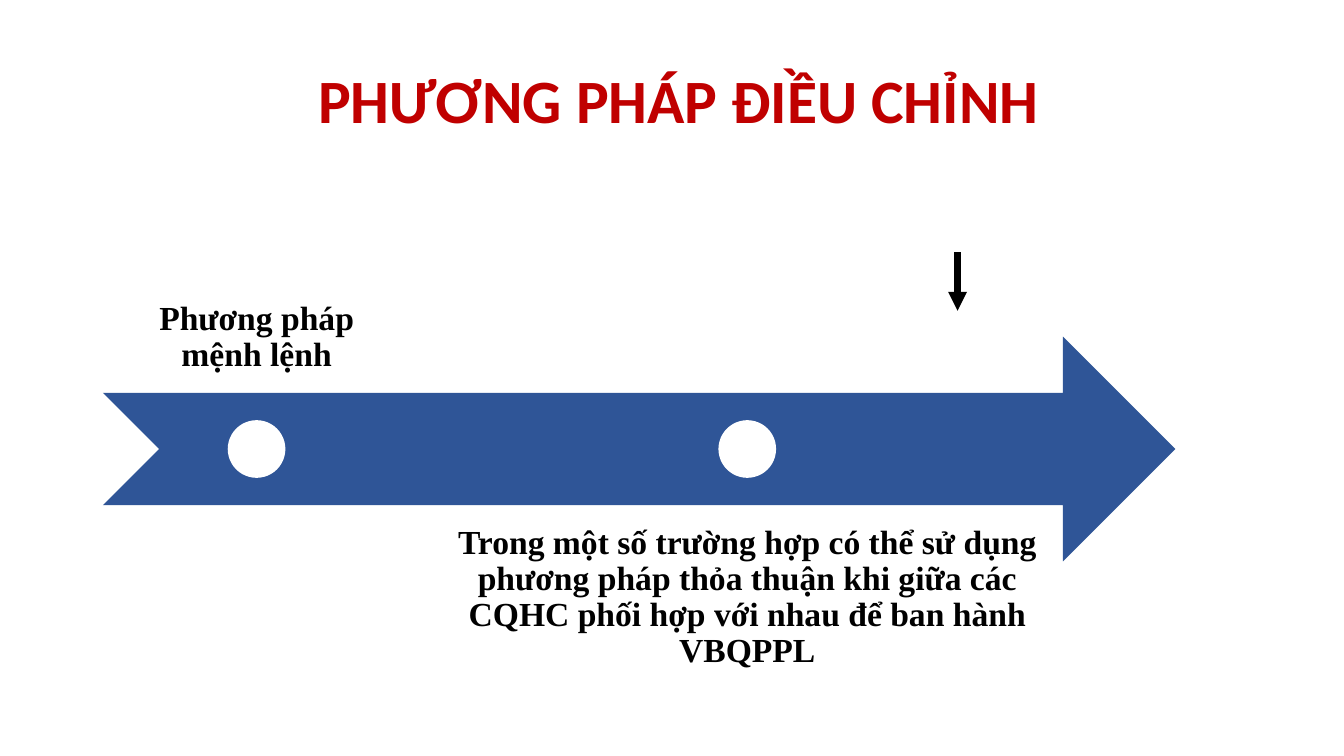
from pptx import Presentation
from pptx.dml.color import RGBColor
from pptx.enum.shapes import MSO_CONNECTOR, MSO_SHAPE
from pptx.enum.text import MSO_ANCHOR, PP_ALIGN
from pptx.oxml.ns import qn
from pptx.util import Pt
from lxml import etree

NOTCHED_ARROW = MSO_SHAPE.NOTCHED_RIGHT_ARROW
OVAL = MSO_SHAPE.OVAL
STRAIGHT = MSO_CONNECTOR.STRAIGHT
TOP, MIDDLE, BOTTOM = MSO_ANCHOR.TOP, MSO_ANCHOR.MIDDLE, MSO_ANCHOR.BOTTOM
CENTER = PP_ALIGN.CENTER

COLORS = {"title": "C00000", "arrow": "2F5597", "dot": "FFFFFF", "text": "000000"}

ARROW_LEFT, ARROW_TOP = 73.5, 240.5
ARROW_WIDTH, ARROW_HEIGHT = 766, 160.5
DOT_SIZE = 40.2
LABEL_INSET = 13.7


def color(name):
    return RGBColor.from_string(COLORS[name])


def add_shape(slide, kind, left, top, width, height, color_name):
    shape = slide.shapes.add_shape(kind, Pt(left), Pt(top), Pt(width), Pt(height))
    shape.shadow.inherit = False
    shape.fill.solid()
    shape.fill.fore_color.rgb = color(color_name)
    shape.line.fill.background()
    return shape


def add_text(slide, text, left, top, width, height, size, font_name, color_name, anchor, inset):
    box = slide.shapes.add_textbox(Pt(left), Pt(top), Pt(width), Pt(height))
    frame = box.text_frame
    frame.word_wrap = True
    frame.vertical_anchor = anchor
    frame.margin_left = frame.margin_right = Pt(inset)
    frame.margin_top = frame.margin_bottom = Pt(inset)
    paragraph = frame.paragraphs[0]
    paragraph.text = text
    paragraph.alignment = CENTER
    paragraph.line_spacing = 0.9
    font = paragraph.font
    font.name = font_name
    font.size = Pt(size)
    font.bold = True
    font.color.rgb = color(color_name)


def add_milestone(slide, text, left, top, width, anchor):
    dot_left = left + (width - DOT_SIZE) / 2
    dot_top = ARROW_TOP + (ARROW_HEIGHT - DOT_SIZE) / 2
    dot = add_shape(slide, OVAL, dot_left, dot_top, DOT_SIZE, DOT_SIZE, "dot")
    dot.line.color.rgb = color("dot")
    dot.line.width = Pt(1)
    add_text(slide, text, left, top, width, ARROW_HEIGHT, 24, "Times New Roman",
             "text", anchor, LABEL_INSET)


def add_down_arrow(slide, x, top, bottom):
    connector = slide.shapes.add_connector(STRAIGHT, Pt(x), Pt(top), Pt(x), Pt(bottom))
    connector.line.color.rgb = color("text")
    connector.line.width = Pt(4.5)
    properties = connector.element.spPr
    line = properties.find(qn("a:ln"))
    etree.SubElement(line, qn("a:tailEnd"), type="triangle")
    etree.SubElement(properties, qn("a:effectLst"))


def main():
    presentation = Presentation()
    presentation.slide_width = Pt(960)
    presentation.slide_height = Pt(540)
    slide = presentation.slides.add_slide(presentation.slide_layouts[6])

    add_shape(slide, NOTCHED_ARROW, ARROW_LEFT, ARROW_TOP, ARROW_WIDTH, ARROW_HEIGHT, "arrow")
    add_milestone(slide, "Phương pháp mệnh lệnh", ARROW_LEFT, 120.2, 219.6, BOTTOM)
    add_milestone(
        slide,
        "Trong một số trường hợp có thể sử dụng phương pháp thỏa thuận khi giữa các "
        "CQHC phối hợp với nhau để ban hành VBQPPL",
        304.5, 361.4, 458.6, TOP)
    add_down_arrow(slide, 684, 180, 222)
    add_text(slide, "PHƯƠNG PHÁP ĐIỀU CHỈNH", ARROW_LEFT, 45.4, 823, 57, 44, "Calibri",
             "title", MIDDLE, 3.6)

    presentation.save("out.pptx")


if __name__ == "__main__":
    main()
